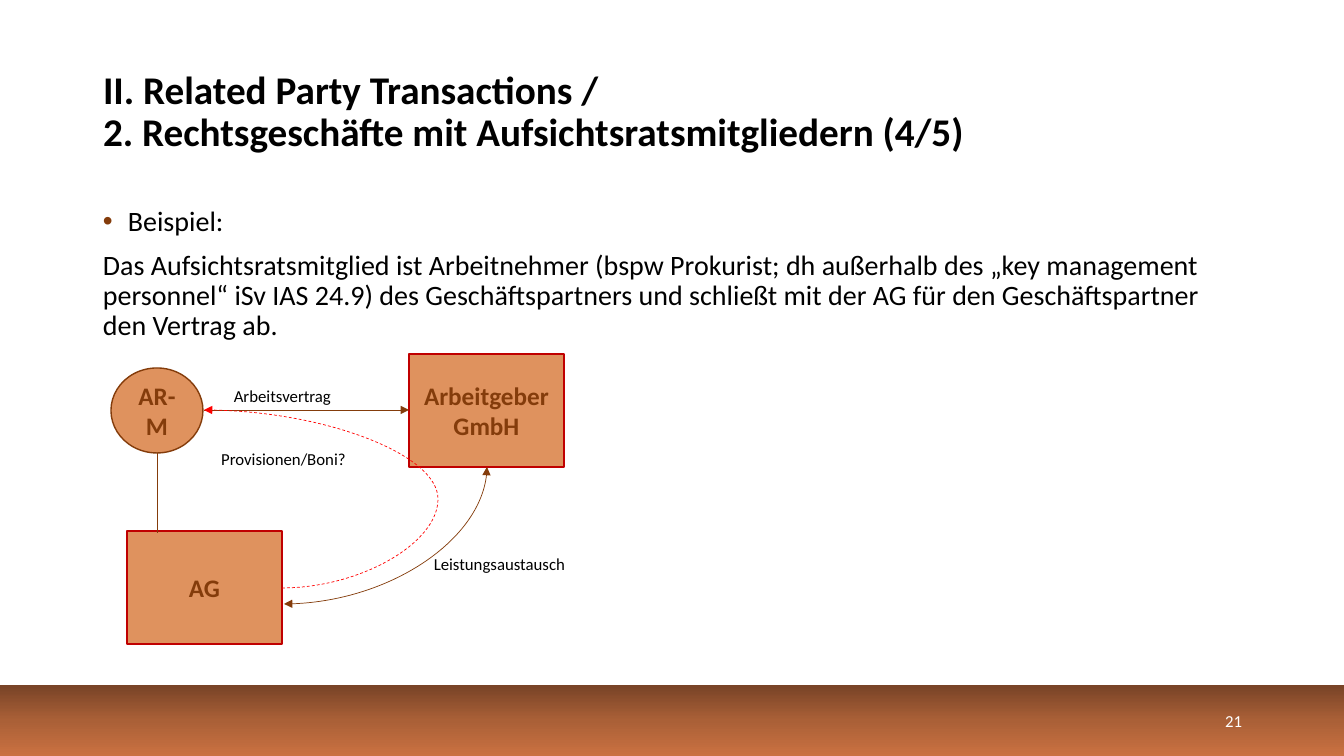
"""Build the slide on transactions with supervisory board members."""
from copy import deepcopy

from lxml.etree import SubElement
from pptx import Presentation
from pptx.dml.color import RGBColor
from pptx.enum.dml import MSO_LINE
from pptx.enum.shapes import MSO_CONNECTOR as LINK, MSO_SHAPE as SHAPE
from pptx.enum.text import MSO_ANCHOR, MSO_AUTO_SIZE, PP_ALIGN
from pptx.oxml.ns import qn
from pptx.util import Pt

SCALE = 914400 / 100.8
COLORS = {
    "black": "000000", "white": "FFFFFF", "brown": "843C0B", "orange": "DF925E",
    "crimson": "C00000", "red": "FF0000",
    "bar_top": "784327", "bar_middle": "AA6037", "bar_bottom": "CA7141",
}


def emu(*lengths):
    return [round(length * SCALE) for length in lengths]


def style(para, size, color, bold=False, align=PP_ALIGN.LEFT):
    para.alignment = align
    para.font.name = "Calibri"
    para.font.size = Pt(size)
    para.font.bold = bold
    para.font.color.rgb = RGBColor.from_string(COLORS[color])


deck = Presentation()
deck.slide_width, deck.slide_height = emu(1344, 756)
page = deck.slides.add_slide(deck.slide_layouts[5])
shapes = page.shapes

bar = shapes.add_shape(SHAPE.RECTANGLE, *emu(0, 685, 1344, 71))
bar.shadow.inherit = False
bar.line.fill.background()
bar.fill.gradient()
bar.fill.gradient_angle = 270
stop_list = bar._element.spPr.find(qn("a:gradFill")).find(qn("a:gsLst"))
stop_list.insert(1, deepcopy(stop_list[0]))
bar_colors = ["bar_top", "bar_middle", "bar_bottom"]
for index, (stop, color) in enumerate(zip(bar.fill.gradient_stops, bar_colors)):
    stop.position = index / 2
    stop.color.rgb = RGBColor.from_string(COLORS[color])

title = shapes.title
title.left, title.top, title.width, title.height = emu(93, 40, 1061, 146)
title.text_frame.text = (
    "II. Related Party Transactions / \v"
    "2. Rechtsgeschäfte mit Aufsichtsratsmitgliedern (4/5)"
)
title.text_frame.word_wrap = True
title.text_frame.auto_size = MSO_AUTO_SIZE.NONE
title.text_frame.vertical_anchor = MSO_ANCHOR.MIDDLE
title.text_frame.paragraphs[0].line_spacing = 0.9
style(title.text_frame.paragraphs[0], 28, "black", bold=True)

body = shapes.add_textbox(*emu(93, 202, 1159, 480)).text_frame
body.word_wrap = True
example = body.paragraphs[0]
example.text = "Beispiel:"
indent = emu(25)[0]
props = example._p.get_or_add_pPr()
props.set("marL", str(indent))
props.set("indent", str(-indent))
bullet_color = SubElement(props, qn("a:buClr"))
SubElement(bullet_color, qn("a:srgbClr"), val=COLORS["brown"])
SubElement(props, qn("a:buFont"), typeface="Arial")
SubElement(props, qn("a:buChar"), char="•")
case = body.add_paragraph()
case.text = (
    "Das Aufsichtsratsmitglied ist Arbeitnehmer (bspw Prokurist; dh außerhalb des "
    "„key management personnel“ iSv IAS 24.9) des Geschäftspartners und schließt "
    "mit der AG für den Geschäftspartner den Vertrag ab."
)
case.space_before = Pt(10)
for para in body.paragraphs:
    para.line_spacing = 0.9
    style(para, 20, "black")

number = shapes.add_textbox(*emu(950, 701, 302, 40)).text_frame
number.word_wrap = True
number.vertical_anchor = MSO_ANCHOR.MIDDLE
number.text = "21"
style(number.paragraphs[0], 12, "white", align=PP_ALIGN.RIGHT)

party = (18, "brown", True)
label = (12, "black", False)
diagram = [
    ("AG", SHAPE.RECTANGLE, (127, 531, 155, 113), "orange", "crimson", party),
    ("AR-M", SHAPE.OVAL, (111, 368, 92, 85), "orange", "brown", party),
    ("Arbeitgeber GmbH", SHAPE.RECTANGLE, (409, 354, 155, 113), "orange", "crimson", party),
    ("Leistungsaustausch", SHAPE.RECTANGLE, (423, 542, 153, 43), "white", "white", label),
    ("Arbeitsvertrag", SHAPE.RECTANGLE, (205, 389, 155, 14), "white", "white", label),
    ("Provisionen/Boni?", SHAPE.RECTANGLE, (207, 437, 153, 43), "white", "white", label),
]
for text, kind, place, fill, outline, font in diagram:
    box = shapes.add_shape(kind, *emu(*place))
    box.shadow.inherit = False
    box.fill.solid()
    box.fill.fore_color.rgb = RGBColor.from_string(COLORS[fill])
    box.line.color.rgb = RGBColor.from_string(COLORS[outline])
    box.line.width = Pt(1)
    box.text_frame.word_wrap = True
    box.text_frame.vertical_anchor = MSO_ANCHOR.MIDDLE
    box.text_frame.text = text
    style(box.text_frame.paragraphs[0], *font, align=PP_ALIGN.CENTER)

links = {
    "membership": (LINK.STRAIGHT, (157, 453, 157, 533), "brown", []),
    "exchange": (LINK.CURVE, (284, 604, 487, 467), "brown", ["headEnd", "tailEnd"]),
    "employment": (LINK.STRAIGHT, (204, 410, 409, 410), "brown", ["tailEnd"]),
    "commission": (LINK.CURVE, (282, 588, 204, 410), "red", ["tailEnd"]),
}
for name, (kind, ends, color, arrows) in links.items():
    link = shapes.add_connector(kind, *emu(*ends))
    link.line.color.rgb = RGBColor.from_string(COLORS[color])
    link.line.width = Pt(0.5)
    geometry = link._element.spPr.find(qn("a:prstGeom"))
    if name == "exchange":
        geometry.set("prst", "curvedConnector2")
    if name == "commission":
        link.line.dash_style = MSO_LINE.DASH
        guides = geometry.find(qn("a:avLst"))
        SubElement(guides, qn("a:gd"), name="adj1", fmla="val -200200")
    for arrow in arrows:
        SubElement(link.line._get_or_add_ln(), qn(f"a:{arrow}"), type="triangle")
    SubElement(link._element.spPr, qn("a:effectLst"))

deck.save("out.pptx")
